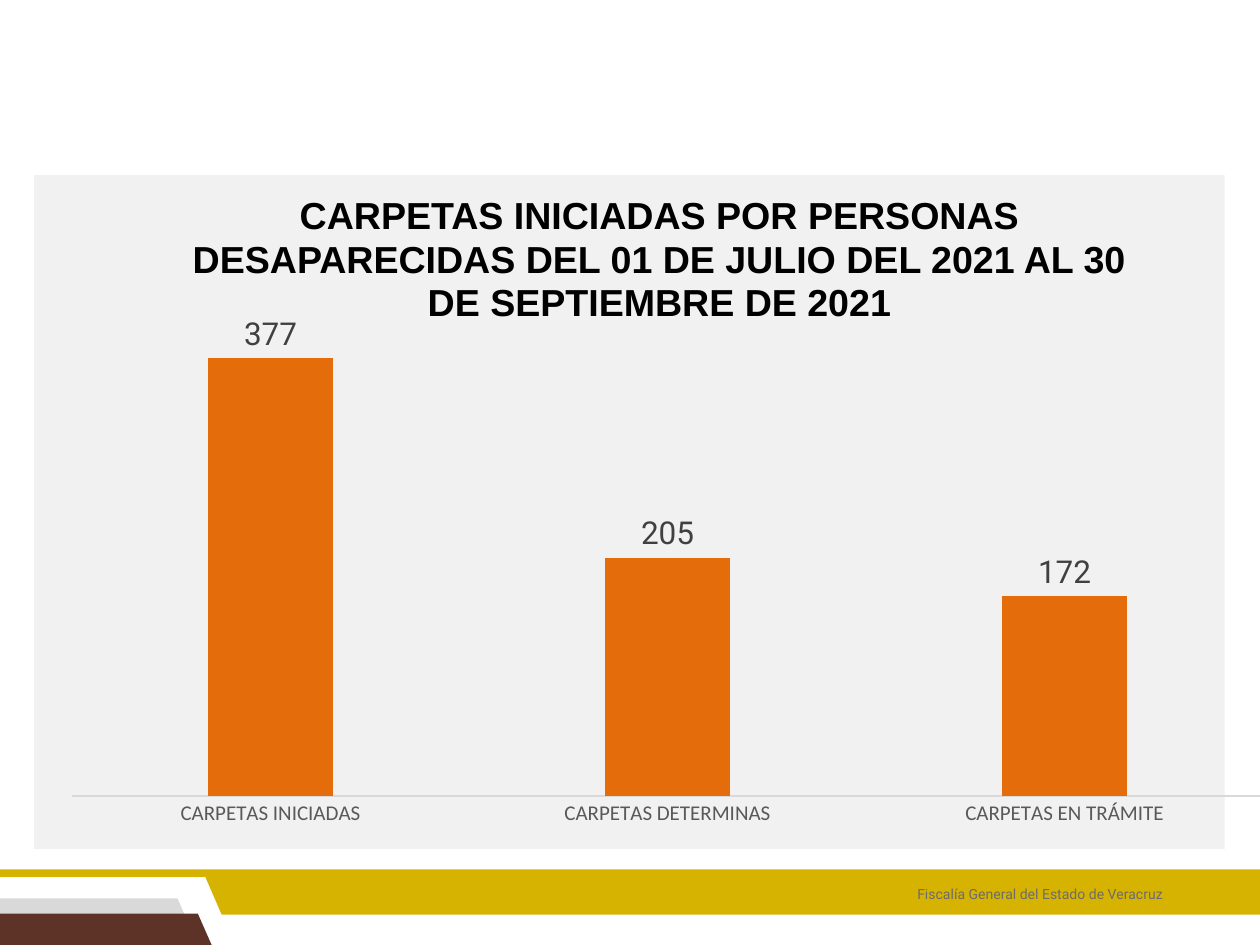
from dataclasses import dataclass
from typing import Any

from pptx import Presentation, util as u
from pptx.chart.data import CategoryChartData
from pptx.dml.color import RGBColor
from pptx.enum import chart as charts, shapes, text
from pptx.oxml import parse_xml
from pptx.oxml.ns import nsdecls

COLORS = {
    "gray": "D9D9D9", "brown": "5E3327", "gold": "D6B300", "panel": "F1F1F1",
    "footer": "6C6C6C", "title": "000000", "bar": "E46C0A",
    "value": "404040", "category": "595959",
}
CASES = {
    "CARPETAS INICIADAS": 377,
    "CARPETAS DETERMINAS": 205,
    "CARPETAS EN TRÁMITE": 172,
}


@dataclass
class SlideBuilder:
    page: Any
    colors: dict

    def color(self, name):
        return RGBColor.from_string(self.colors[name])

    def paint(self, shape, name):
        shape.shadow.inherit = False
        shape.fill.solid()
        shape.fill.fore_color.rgb = self.color(name)
        shape.line.fill.background()

    def style(self, font, name, size, color, bold=False):
        font.name, font.size, font.bold = name, u.Pt(size), bold
        font.color.rgb = self.color(color)

    def polygon(self, points, color):
        corners = [(u.Inches(x), u.Inches(y)) for x, y in points]
        outline = self.page.shapes.build_freeform(*corners[0])
        outline.add_line_segments(corners[1:], close=True)
        self.paint(outline.convert_to_shape(), color)

    def panel(self, area, color):
        shape = self.page.shapes.add_shape(
            shapes.MSO_SHAPE.RECTANGLE, *map(u.Inches, area))
        self.paint(shape, color)

    def label(self, area, wording, font, top_inset, align=None, spacing=None):
        box = self.page.shapes.add_textbox(*map(u.Inches, area))
        frame = box.text_frame
        frame.word_wrap = True
        frame.margin_left = frame.margin_right = frame.margin_bottom = 0
        frame.margin_top = u.Inches(top_inset)
        para = frame.paragraphs[0]
        para.text = wording
        para.alignment = align
        para.line_spacing = spacing
        self.style(para.font, *font)

    def column_chart(self, area, values, top):
        data = CategoryChartData()
        data.categories = list(values)
        data.add_series("Carpetas", list(values.values()))
        chart = self.page.shapes.add_chart(
            charts.XL_CHART_TYPE.COLUMN_CLUSTERED, *map(u.Inches, area), data).chart
        chart.has_legend = chart.has_title = False
        self.style(chart.font, "Calibri", 10, "title")

        plot = chart.plots[0]
        plot.gap_width, plot.overlap = 219, -27
        plot.vary_by_categories = False
        series = plot.series[0]
        series.format.fill.solid()
        series.format.fill.fore_color.rgb = self.color("bar")
        labels = series.data_labels
        labels.show_value = True
        labels.position = charts.XL_LABEL_POSITION.OUTSIDE_END
        self.style(labels.font, "Roboto", 18, "value")

        axis = chart.category_axis
        axis.major_tick_mark = axis.minor_tick_mark = charts.XL_TICK_MARK.NONE
        axis.format.line.color.rgb = self.color("gray")
        axis.format.line.width = u.Pt(0.75)
        self.style(axis.tick_labels.font, "Calibri", 12, "category")
        scale = chart.value_axis
        scale.visible = scale.has_major_gridlines = False
        scale.minimum_scale, scale.maximum_scale = 0, top
        self.place_plot(chart, x=0.03, y=0.03, w=0.97, h=0.86)

    def place_plot(self, chart, **fractions):
        """Fix the inner plot area as fractions of the chart frame."""
        modes = "".join(f'<c:{side}Mode val="edge"/>' for side in "xy")
        sizes = "".join(f'<c:{key} val="{part}"/>' for key, part in fractions.items())
        layout = parse_xml(
            f'<c:layout {nsdecls("c")}><c:manualLayout><c:layoutTarget val="inner"/>'
            f'{modes}{sizes}</c:manualLayout></c:layout>')
        area = chart.element.chart.plotArea
        for old in area.xpath("c:layout"):
            area.remove(old)
        area.insert(0, layout)


def main():
    deck = Presentation()
    deck.slide_width, deck.slide_height = u.Inches(10), u.Inches(7.5)
    slide = SlideBuilder(deck.slides.add_slide(deck.slide_layouts[6]), COLORS)

    slide.polygon([(0, 7.13), (1.41, 7.13), (1.53, 7.41), (0, 7.41)], "gray")
    slide.polygon([(0, 7.25), (1.57, 7.25), (1.68, 7.5), (0, 7.5)], "brown")
    slide.polygon([(0, 6.9), (10, 6.9), (10, 7.26), (1.76, 7.26),
                   (1.63, 6.96), (0, 6.96)], "gold")
    slide.panel((0.27, 1.39, 9.45, 5.35), "panel")
    slide.label((7.28, 7.02, 2.09, 0.16), "Fiscalía General del Estado de Veracruz",
                ("Roboto", 8, "footer"), 0.01)
    slide.label((1.5, 1.49, 7.47, 1.09),
                "CARPETAS INICIADAS POR PERSONAS DESAPARECIDAS "
                "DEL 01 DE JULIO DEL 2021 AL 30 DE SEPTIEMBRE DE 2021",
                ("Arial", 21.5, "title", True), 0.05,
                text.PP_ALIGN.CENTER, u.Pt(24.8))
    slide.column_chart((0.28, 2.5, 9.75, 4.29), CASES, top=400)
    deck.save("out.pptx")


if __name__ == "__main__":
    main()
